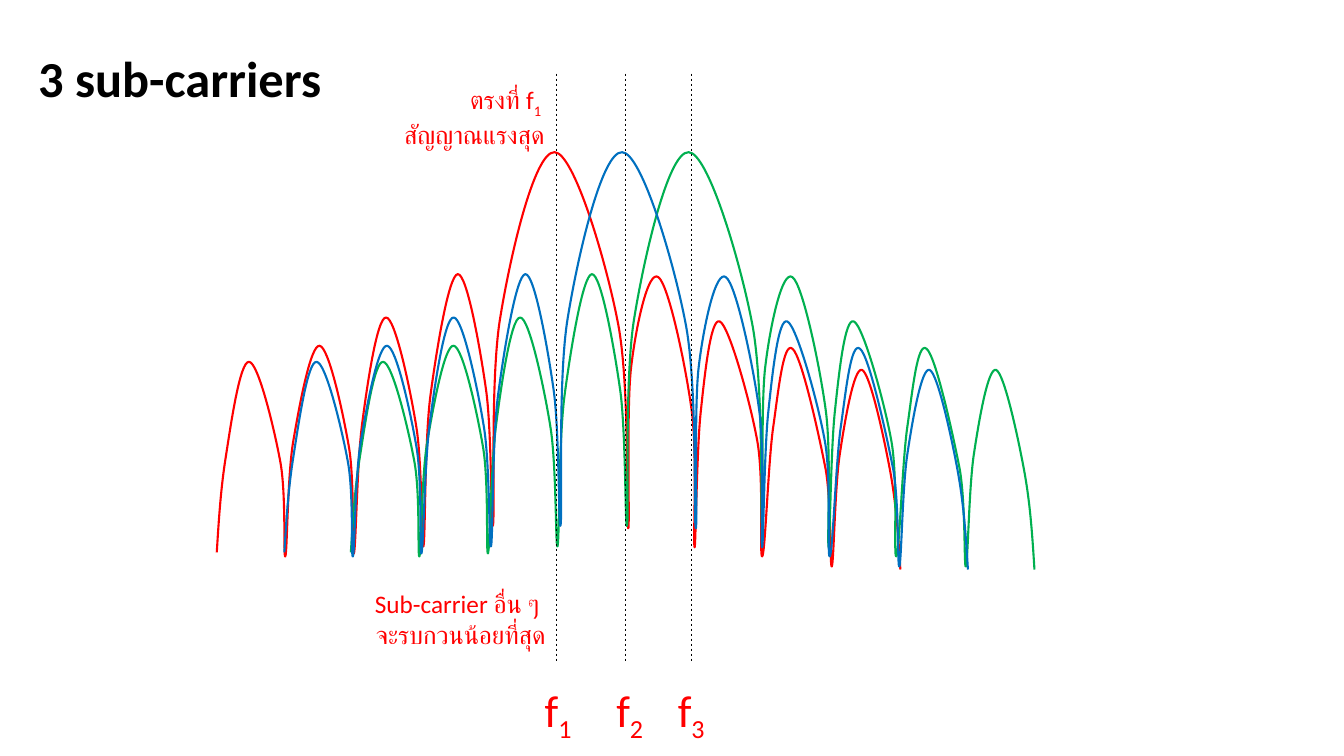
from lxml import etree
from pptx import Presentation
from pptx import util as u
from pptx.dml.color import RGBColor
from pptx.enum import dml, shapes, text
from pptx.oxml.ns import qn

PX = 9144  # EMU: 100 px to the inch
COLORS = {"red": "FF0000", "blue": "0070C0", "green": "00B050", "black": "000000"}

# Spectrum of the first sub-carrier: two control points and an end point per row
SPECTRUM_START = (215, 548)
SPECTRUM = [
    # left side lobes
    (217, 516, 219, 484, 224, 453), (229, 421, 238, 358, 247, 359),
    (256, 359, 272, 425, 278, 458), (284, 490, 281, 555, 283, 552),
    (285, 548, 285, 471, 291, 437), (297, 402, 308, 342, 317, 343),
    (326, 344, 340, 408, 346, 443), (352, 477, 349, 552, 351, 549),
    (353, 545, 354, 461, 359, 422), (364, 383, 374, 314, 383, 315),
    (392, 315, 407, 386, 413, 424), (419, 461, 418, 547, 420, 542),
    (422, 536, 421, 437, 427, 392), (433, 347, 445, 273, 454, 272),
    (463, 271, 476, 344, 482, 386), (488, 427, 487, 532, 489, 521),
    # main lobe
    (491, 509, 486, 377, 496, 316), (506, 254, 530, 150, 550, 151),
    (569, 151, 601, 258, 613, 321), (625, 383, 621, 516, 623, 524),
    # right side lobes
    (625, 531, 621, 405, 626, 364), (631, 322, 643, 267, 653, 275),
    (663, 282, 680, 362, 686, 407), (692, 451, 687, 542, 689, 543),
    (690, 543, 691, 446, 695, 409), (699, 371, 705, 314, 714, 319),
    (723, 323, 744, 398, 751, 437), (758, 475, 753, 554, 756, 552),
    (759, 549, 762, 457, 767, 423), (772, 388, 777, 338, 786, 346),
    (795, 353, 812, 430, 819, 466), (825, 502, 823, 564, 825, 562),
    (827, 559, 828, 482, 833, 450), (838, 417, 847, 364, 855, 367),
    (863, 370, 877, 435, 883, 468), (889, 501, 891, 533, 893, 565),
]
CARRIER_SHIFTS = [("red", 0), ("green", 133), ("blue", 67)]
FREQUENCIES = [("1", 552, 521), ("2", 620, 592), ("3", 686, 653)]  # index, line x, label left


class SlideBuilder:
    font = "Calibri"

    def __init__(self, presentation):
        self.slide = presentation.slides.add_slide(presentation.slide_layouts[6])

    def color(self, name):
        return RGBColor.from_string(COLORS[name])

    def curve(self, start, segments, color, shift):
        """Draw an open chain of cubic Bezier segments, moved right by shift px."""
        points = [(row[i] + shift, row[i + 1]) for row in segments for i in (0, 2, 4)]
        builder = self.slide.shapes.build_freeform(start[0] + shift, start[1], scale=PX)
        builder.add_line_segments(points, close=False)
        shape = builder.convert_to_shape()
        shape.shadow.inherit = False
        shape.fill.background()
        shape.line.color.rgb = self.color(color)
        shape.line.width = u.Pt(1.5)
        outline = next(shape._element.iter(qn("a:path")))
        steps = outline.findall(qn("a:lnTo"))
        for i in range(0, len(steps), 3):
            bezier = etree.SubElement(outline, qn("a:cubicBezTo"))
            for step in steps[i:i + 3]:
                bezier.append(step[0])
                outline.remove(step)

    def dashed_line(self, x, top, bottom):
        line = self.slide.shapes.add_connector(
            shapes.MSO_CONNECTOR.STRAIGHT, x * PX, top * PX, x * PX, bottom * PX)
        line.line.color.rgb = self.color("black")
        line.line.width = u.Pt(0.5)
        line.line.dash_style = dml.MSO_LINE.DASH
        etree.SubElement(line._element.spPr, qn("a:effectLst"))

    def label(self, box, pieces, size, color="red", align="RIGHT", bold=False):
        """Pieces are strings; "\\v" breaks the line and a leading "_" means subscript."""
        shape = self.slide.shapes.add_textbox(*(side * PX for side in box))
        frame = shape.text_frame
        frame.word_wrap = True
        frame.auto_size = text.MSO_AUTO_SIZE.SHAPE_TO_FIT_TEXT
        paragraph = frame.paragraphs[0]
        paragraph.alignment = text.PP_ALIGN[align]
        for piece in pieces:
            if piece == "\v":
                paragraph.add_line_break()
                continue
            run = paragraph.add_run()
            run.text = piece.removeprefix("_")
            run.font.name = self.font
            run.font.size = u.Pt(size)
            run.font.bold = bold
            run.font.color.rgb = self.color(color)
            if piece.startswith("_"):
                run._r.get_or_add_rPr().set("baseline", "-25000")


def main():
    presentation = Presentation()
    presentation.slide_width = 1333 * PX
    presentation.slide_height = 750 * PX
    builder = SlideBuilder(presentation)

    for color, shift in CARRIER_SHIFTS:
        builder.curve(SPECTRUM_START, SPECTRUM, color, shift)
    for _, x, _ in FREQUENCIES:
        builder.dashed_line(x, 73, 658)
    for index, _, left in FREQUENCIES:
        builder.label((left, 672, 65, 64), ["f", "_" + index], 32, align="CENTER")

    builder.label((28, 42, 345, 71), ["3 sub-carriers"], 36, "black", "LEFT", bold=True)
    builder.label((252, 579, 299, 71), ["Sub-carrier อื่น ๆ ", "\v", "จะรบกวนน้อยที่สุด"], 18)
    builder.label((348, 79, 202, 71), ["ตรงที่ f", "_1 ", "\v", "สัญญาณแรงสุด"], 18)
    presentation.save("out.pptx")


if __name__ == "__main__":
    main()
